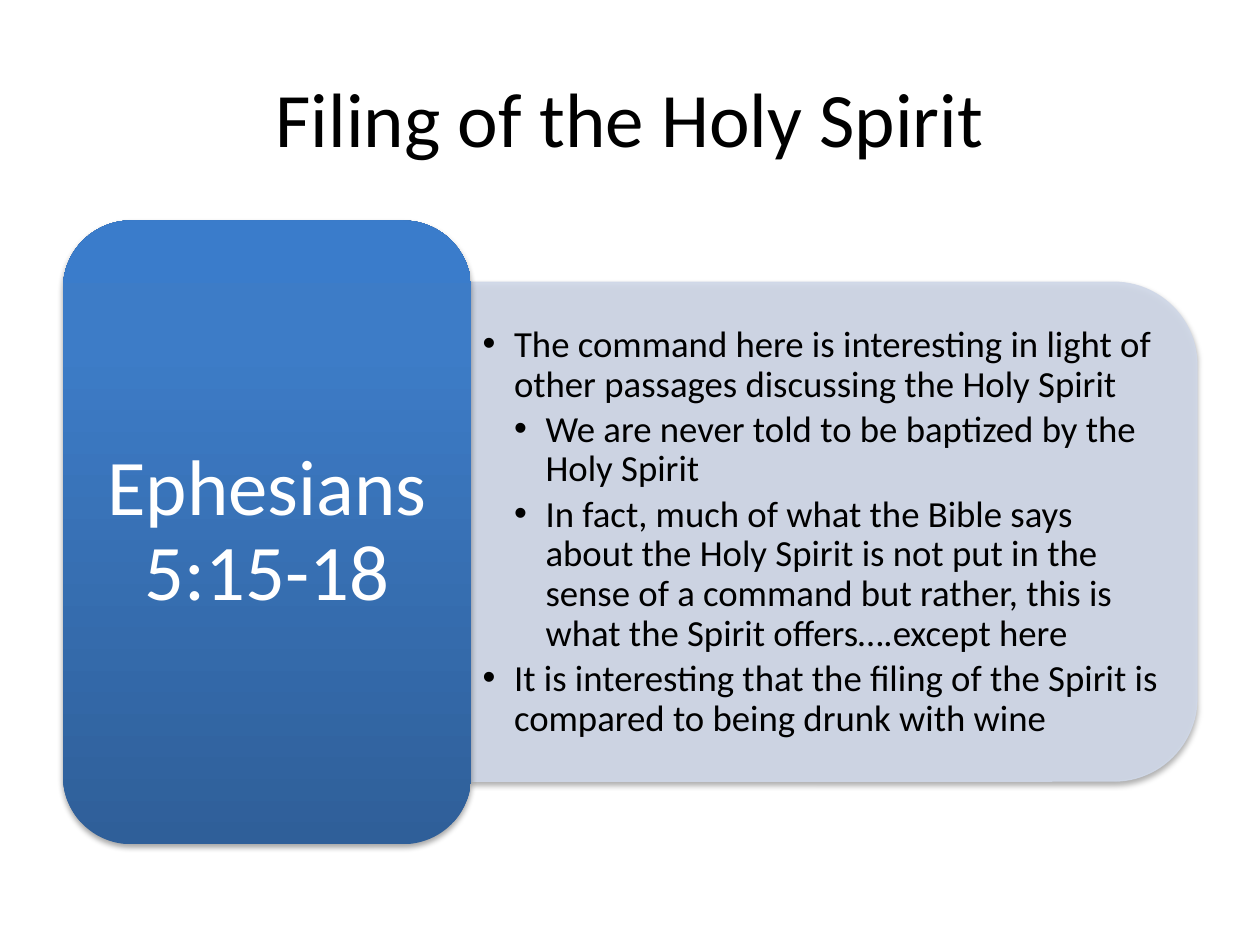
import lxml.etree
import pptx
import pptx.dml.color
import pptx.enum.shapes
import pptx.enum.text
import pptx.oxml
import pptx.oxml.ns
import pptx.util

Inches = pptx.util.Inches
Pt = pptx.util.Pt
SHAPES = pptx.enum.shapes.MSO_SHAPE
ALIGN = pptx.enum.text.PP_ALIGN
qn = pptx.oxml.ns.qn

TITLE = "Filing of the Holy Spirit"
PASSAGE = "Ephesians 5:15-18"
POINTS = [
    (1, "The command here is interesting in light of other passages discussing the Holy Spirit"),
    (2, "We are never told to be baptized by the Holy Spirit"),
    (2, "In fact, much of what the Bible says about the Holy Spirit is not put in the sense of "
        "a command but rather, this is what the Spirit offers….except here"),
    (1, "It is interesting that the filing of the Spirit is compared to being drunk with wine"),
]
COLORS = {"text": "000000", "passage": "FFFFFF", "panel": "D0D8E8", "shadow": "000000"}
CARD_STOPS = [(0, "2F5F99"), (80, "3D7CC7"), (100, "3A7CCB")]
FONT = "Calibri"
INDENT = 0.25

TITLE_BOX = (0.5, 0.3, 9, 1.25)
CARD_BOX = (0.5, 1.75, 3.24, 4.95)
PANEL_BOX = (3.74, 2.24, 5.76, 3.96)
POINTS_BOX = (3.74, 2.44, 5.57, 3.57)


def rgb(name):
    return pptx.dml.color.RGBColor.from_string(COLORS[name])


def add_child(parent, tag, **attributes):
    child = lxml.etree.SubElement(parent, qn(tag))
    for name, value in attributes.items():
        child.set(name, str(value))
    return child


def add_shadow(shape):
    shape.shadow.inherit = False
    effects = shape._element.spPr.find(qn("a:effectLst"))
    shadow = add_child(effects, "a:outerShdw", blurRad=Pt(3.1), dist=Pt(1.8),
                       dir=90 * 60000, rotWithShape=0)
    color = add_child(shadow, "a:srgbClr", val=COLORS["shadow"])
    add_child(color, "a:alpha", val=35000)


def fill_gradient(shape, stops):
    shape.fill.gradient()
    gradient = shape._element.spPr.find(qn("a:gradFill"))
    for child in list(gradient):
        gradient.remove(child)
    stop_list = add_child(gradient, "a:gsLst")
    for position, color in stops:
        stop = add_child(stop_list, "a:gs", pos=position * 1000)
        add_child(stop, "a:srgbClr", val=color)
    add_child(gradient, "a:lin", ang=270 * 60000, scaled=0)


def set_frame(shape, horizontal, vertical):
    frame = shape.text_frame
    frame.word_wrap = True
    frame.vertical_anchor = pptx.enum.text.MSO_ANCHOR.MIDDLE
    frame.margin_left = frame.margin_right = Inches(horizontal)
    frame.margin_top = frame.margin_bottom = Inches(vertical)
    return frame


def write(paragraph, text, size, color, alignment, spacing=1):
    paragraph.text = text
    paragraph.alignment = alignment
    paragraph.line_spacing = spacing
    for run in paragraph.runs:
        run.font.name = FONT
        run.font.size = Pt(size)
        run.font.color.rgb = rgb(color)


def add_title(slide):
    box = slide.shapes.add_textbox(*map(Inches, TITLE_BOX))
    frame = set_frame(box, 0.1, 0.05)
    write(frame.paragraphs[0], TITLE, 44, "text", ALIGN.CENTER)


def add_panel(slide):
    left, top, width, height = PANEL_BOX
    panel = slide.shapes.add_shape(
        SHAPES.ROUND_2_SAME_RECTANGLE,
        Inches(left + (width - height) / 2), Inches(top + (height - width) / 2),
        Inches(height), Inches(width))
    panel.rotation = 90
    panel.fill.solid()
    panel.fill.fore_color.rgb = rgb("panel")
    panel.line.color.rgb = rgb("panel")
    panel.line.width = Pt(0.75)
    for color in panel._element.spPr.iter(qn("a:srgbClr")):
        add_child(color, "a:alpha", val=90000)
    add_shadow(panel)


def add_points(slide):
    box = slide.shapes.add_textbox(*map(Inches, POINTS_BOX))
    frame = set_frame(box, 0.09, 0.04)
    for index, (level, text) in enumerate(POINTS):
        paragraph = frame.add_paragraph() if index else frame.paragraphs[0]
        write(paragraph, text, 21, "text", ALIGN.LEFT, 0.9)
        paragraph.level = level
        paragraph.space_after = Pt(21 * 0.15)
        properties = paragraph._p.get_or_add_pPr()
        properties.set("marL", str(Inches(level * INDENT)))
        properties.set("indent", str(-Inches(INDENT)))
        add_child(properties, "a:buFont", typeface="Arial")
        add_child(properties, "a:buChar", char="•")


def add_card(slide):
    card = slide.shapes.add_shape(SHAPES.ROUNDED_RECTANGLE, *map(Inches, CARD_BOX))
    fill_gradient(card, CARD_STOPS)
    card.line.fill.background()
    add_shadow(card)
    frame = set_frame(card, 0.19, 0.09)
    write(frame.paragraphs[0], PASSAGE, 45, "passage", ALIGN.CENTER, 0.9)


def main():
    presentation = pptx.Presentation()
    presentation.slide_width = Inches(10)
    presentation.slide_height = Inches(7.5)
    slide = presentation.slides.add_slide(presentation.slide_layouts[6])
    add_title(slide)
    add_panel(slide)
    add_points(slide)
    add_card(slide)
    presentation.save("out.pptx")


if __name__ == "__main__":
    main()
